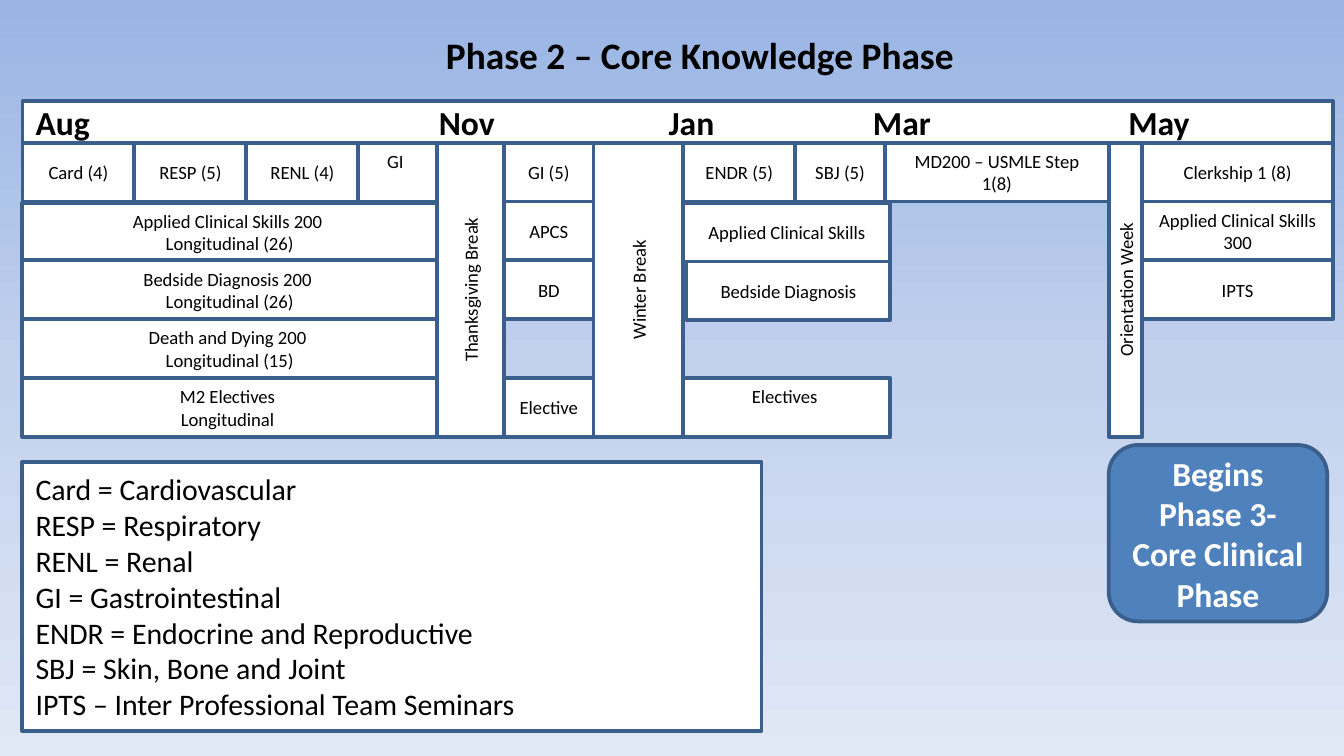
from copy import deepcopy
from pptx import Presentation
from pptx.dml.color import RGBColor
from pptx.enum.shapes import MSO_SHAPE
from pptx.enum.text import MSO_ANCHOR, PP_ALIGN
from pptx.oxml.ns import qn
from pptx.util import Inches, Pt
from lxml.etree import SubElement

HEX = {"top": "9AB5E4", "mid": "C2D1ED", "low": "E1E8F5", "edge": "3A5F8C",
       "paper": "FFFFFF", "ink": "000000", "blue": "4F81BD"}
WIDE, HIGH = 10, 10 * 9 / 16
COL, ROW = WIDE / 120, HIGH * 7 / 90
LEFT, TOP = 2 * COL, HIGH * 17 / 90

BLOCKS = [("Card (4)", 10), ("RESP (5)", 10), ("RENL (4)", 10), ("GI ", 7),
          ("Thanksgiving Break", 6), ("GI (5)", 8), ("Winter Break", 8),
          ("ENDR (5)", 10), ("SBJ (5)", 8), ("MD200 – USMLE Step 1(8)", 20),
          ("Orientation Week", 3), ("Clerkship 1 (8)", 17)]
BREAKS = {"Thanksgiving Break", "Winter Break", "Orientation Week"}
RAISED = {"GI ", "Electives "}
COURSES = [
    ("Applied Clinical Skills 200 \nLongitudinal (26)", 0, 1.02, 37),
    ("Bedside Diagnosis 200 \nLongitudinal (26)", 0, 2, 37),
    ("Death and Dying 200 \nLongitudinal (15)", 0, 3, 37),
    ("M2 Electives \nLongitudinal ", 0, 4, 37),
    ("APCS", 43, 1, 8),
    ("BD", 43, 2, 8),
    ("Elective", 43, 4, 8),
    ("Applied Clinical Skills", 59, 1.02, 18.5),
    ("Bedside Diagnosis", 59.3, 2.02, 18.2),
    ("Electives ", 59, 4, 18.5),
    ("Applied Clinical Skills\n300", 100, 1, 17),
    ("IPTS", 100, 2, 17),
]
MONTHS = "Aug\tNov\tJan\tMar\tMay"
TABS = [3, 4.71, 6.23, 8.13]
LEGEND = """Card = Cardiovascular
RESP = Respiratory
RENL = Renal
GI = Gastrointestinal
ENDR = Endocrine and Reproductive
SBJ = Skin, Bone and Joint
IPTS – Inter Professional Team Seminars"""


def rgb(name):
    return RGBColor.from_string(HEX[name])


def write(frame, text, size, align=PP_ALIGN.CENTER, bold=False, ink="ink"):
    frame.word_wrap = True
    frame.text = text
    for para in frame.paragraphs:
        para.alignment = align
        para.font.name = "Calibri"
        para.font.size = Pt(size)
        para.font.bold = bold
        para.font.color.rgb = rgb(ink)


def box(slide, text, col, row, wide, high, size=10, fill="paper",
        kind=MSO_SHAPE.RECTANGLE, **style):
    shape = slide.shapes.add_shape(
        kind, Inches(LEFT + col * COL), Inches(TOP + row * ROW),
        Inches(wide * COL), Inches(high * ROW))
    shape.shadow.inherit = False
    shape.fill.solid()
    shape.fill.fore_color.rgb = rgb(fill)
    shape.line.color.rgb = rgb("edge")
    shape.line.width = Pt(2)
    frame = shape.text_frame
    frame.vertical_anchor = MSO_ANCHOR.MIDDLE
    write(frame, text, size, **style)
    if text in RAISED:
        frame.margin_bottom = Inches(0.22)
    return frame


def turn(frame):
    frame._txBody.bodyPr.set("vert", "vert270")


def set_tabs(para, stops):
    props = para._p.get_or_add_pPr()
    tabs = SubElement(props, qn("a:tabLst"))
    for stop in stops:
        SubElement(tabs, qn("a:tab"), pos=str(Inches(stop)), algn="l")
    props.insert(0, tabs)


def paint(slide):
    fill = slide.background.fill
    fill.gradient()
    fill.gradient_angle = 270
    stops = slide.element.find(".//" + qn("a:gsLst"))
    stops.append(deepcopy(stops[0]))
    for i, (stop, name) in enumerate(zip(fill.gradient_stops, ("top", "mid", "low"))):
        stop.position = i / 2
        stop.color.rgb = rgb(name)


def add_title(slide):
    title = slide.shapes.add_textbox(
        Inches(16 * COL), Inches(HIGH / 30), Inches(93 * COL), Inches(ROW))
    write(title.text_frame, "Phase 2 – Core Knowledge Phase", 20, bold=True)


def add_blocks(slide):
    col = 0
    for text, wide in BLOCKS:
        pause = text in BREAKS
        frame = box(slide, text, col, 0, wide, 5 if pause else 1)
        if pause:
            turn(frame)
        col += wide


def main():
    deck = Presentation()
    deck.slide_width, deck.slide_height = Inches(WIDE), Inches(HIGH)
    slide = deck.slides.add_slide(deck.slide_layouts[6])
    paint(slide)
    add_blocks(slide)
    add_title(slide)
    for text, col, row, wide in COURSES:
        box(slide, text, col, row, wide, 1)
    months = box(slide, MONTHS, 0, -0.71, 117, 0.71, 18,
                 align=PP_ALIGN.LEFT, bold=True)
    set_tabs(months.paragraphs[0], TABS)
    box(slide, LEGEND, 0, 5.43, 66, 4.57, 16, align=PP_ALIGN.LEFT)
    box(slide, "Begins Phase 3-\nCore Clinical Phase", 97, 5.14, 19.5, 3, 18,
        "blue", MSO_SHAPE.ROUNDED_RECTANGLE, bold=True, ink="paper")
    deck.save("out.pptx")


if __name__ == "__main__":
    main()
